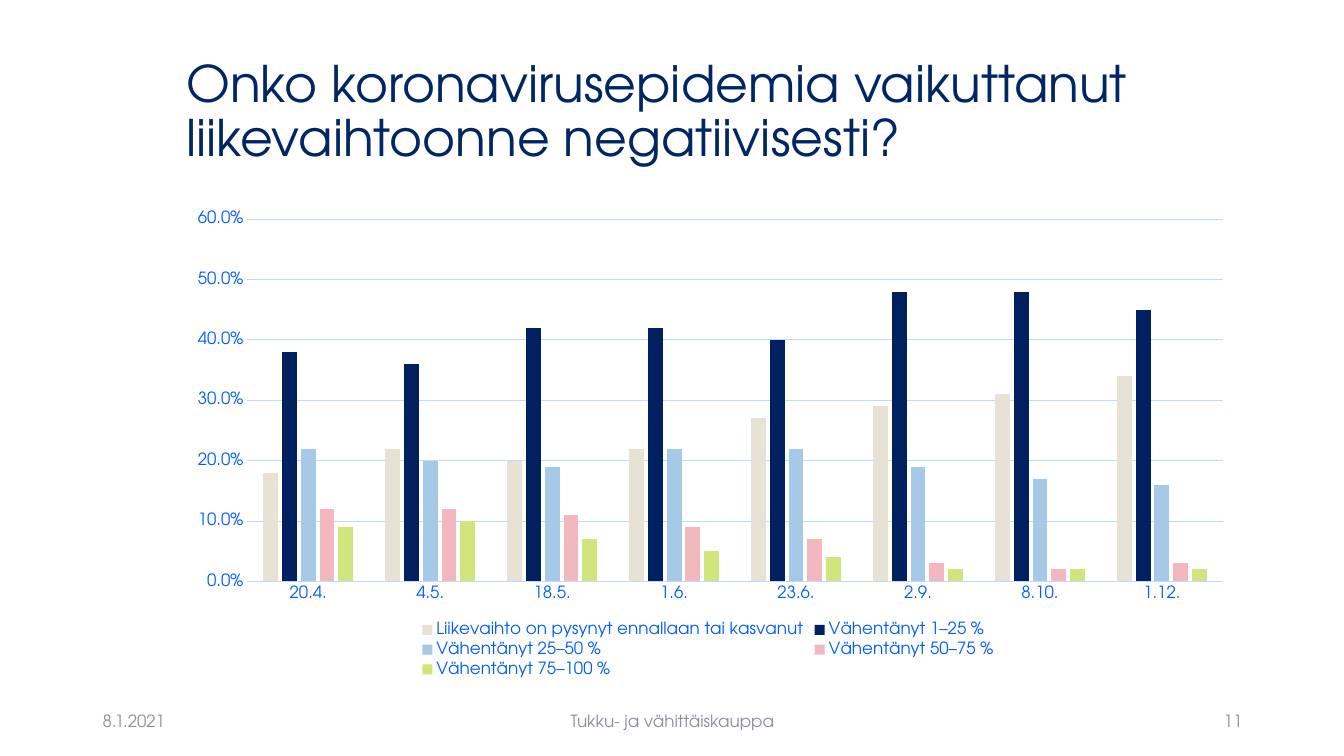
from pptx import Presentation
from pptx import util as u
from pptx.chart import data
from pptx.dml.color import RGBColor
from pptx.enum import chart as c, text

FONT = "TeX Gyre Adventor"
NAVY = RGBColor(0x00, 0x26, 0x63)
GREY = RGBColor(0x8C, 0x8E, 0x9F)
BLUE = RGBColor(0x00, 0x5D, 0xF3)
PALE_BLUE = RGBColor(0xC1, 0xD9, 0xFF)
SAND = RGBColor(0xE8, 0xE2, 0xD5)
DARK_BLUE = RGBColor(0x00, 0x20, 0x60)
SKY = RGBColor(0xA5, 0xC9, 0xE7)
PINK = RGBColor(0xF2, 0xB7, 0xBF)
LIME = RGBColor(0xD1, 0xE5, 0x7C)


def set_font(font, size, color):
    for name, value in {"name": FONT, "size": u.Pt(size)}.items():
        setattr(font, name, value)
    font.color.rgb = color


presentation = Presentation()
presentation.slide_width = u.Inches(13.33)
presentation.slide_height = u.Inches(7.5)
slide = presentation.slides.add_slide(presentation.slide_layouts[6])

LEFT, CENTER, RIGHT = text.PP_ALIGN.LEFT, text.PP_ALIGN.CENTER, text.PP_ALIGN.RIGHT
texts = [
    ("Onko koronavirusepidemia vaikuttanut liikevaihtoonne negatiivisesti?",
     (1.75, 0.4, 10.59, 1.45), 36, NAVY, LEFT, 0.9),
    ("8.1.2021", (0.92, 6.95, 3, 0.4), 12, GREY, LEFT, 1.0),
    ("Tukku- ja vähittäiskauppa", (4.42, 6.95, 4.5, 0.4), 12, GREY, CENTER, 1.0),
    ("11", (9.42, 6.95, 3, 0.4), 12, GREY, RIGHT, 1.0),
]
for wording, box, size, color, alignment, spacing in texts:
    frame = slide.shapes.add_textbox(*map(u.Inches, box)).text_frame
    frame.word_wrap = True
    frame.vertical_anchor = text.MSO_ANCHOR.MIDDLE
    paragraph = frame.paragraphs[0]
    paragraph.alignment = alignment
    paragraph.line_spacing = spacing
    run = paragraph.add_run()
    run.text = wording
    set_font(run.font, size, color)

answers = [
    ("Liikevaihto on pysynyt ennallaan tai kasvanut", SAND,
     (0.18, 0.22, 0.2, 0.22, 0.27, 0.29, 0.31, 0.34)),
    ("Vähentänyt 1–25 % ", DARK_BLUE, (0.38, 0.36, 0.42, 0.42, 0.4, 0.48, 0.48, 0.45)),
    ("Vähentänyt 25–50 % ", SKY, (0.22, 0.2, 0.19, 0.22, 0.22, 0.19, 0.17, 0.16)),
    ("Vähentänyt 50–75 % ", PINK, (0.12, 0.12, 0.11, 0.09, 0.07, 0.03, 0.02, 0.03)),
    ("Vähentänyt 75–100 % ", LIME, (0.09, 0.1, 0.07, 0.05, 0.04, 0.02, 0.02, 0.02)),
]
chart_data = data.CategoryChartData(number_format="0.0%")
chart_data.categories = ["20.4.", "4.5.", "18.5.", "1.6.", "23.6.", "2.9.", "8.10.", "1.12."]
for name, color, values in answers:
    chart_data.add_series(name, values)
chart = slide.shapes.add_chart(
    c.XL_CHART_TYPE.COLUMN_CLUSTERED,
    *map(u.Inches, (1.75, 2, 10.59, 4.76)), chart_data).chart
set_font(chart.font, 10, NAVY)
chart.has_title = False

plot = chart.plots[0]
for name, value in {"gap_width": 219, "overlap": -27, "vary_by_categories": False}.items():
    setattr(plot, name, value)
for series, (name, color, values) in zip(plot.series, answers):
    series.format.fill.solid()
    series.format.fill.fore_color.rgb = color

category_axis, value_axis = chart.category_axis, chart.value_axis
for axis in (category_axis, value_axis):
    axis.major_tick_mark = axis.minor_tick_mark = c.XL_TICK_MARK.NONE
    set_font(axis.tick_labels.font, 12, BLUE)
value_axis.minimum_scale, value_axis.maximum_scale, value_axis.major_unit = 0, 0.6, 0.1
value_axis.has_major_gridlines = True
value_axis.tick_labels.number_format = "0.0%"
value_axis.tick_labels.number_format_is_linked = False
value_axis.format.line.fill.background()
for line in (category_axis.format.line, value_axis.major_gridlines.format.line):
    line.color.rgb = PALE_BLUE
    line.width = u.Pt(0.75)

chart.has_legend = True
chart.legend.position = c.XL_LEGEND_POSITION.BOTTOM
chart.legend.include_in_layout = False
set_font(chart.legend.font, 12, BLUE)

presentation.save("out.pptx")
